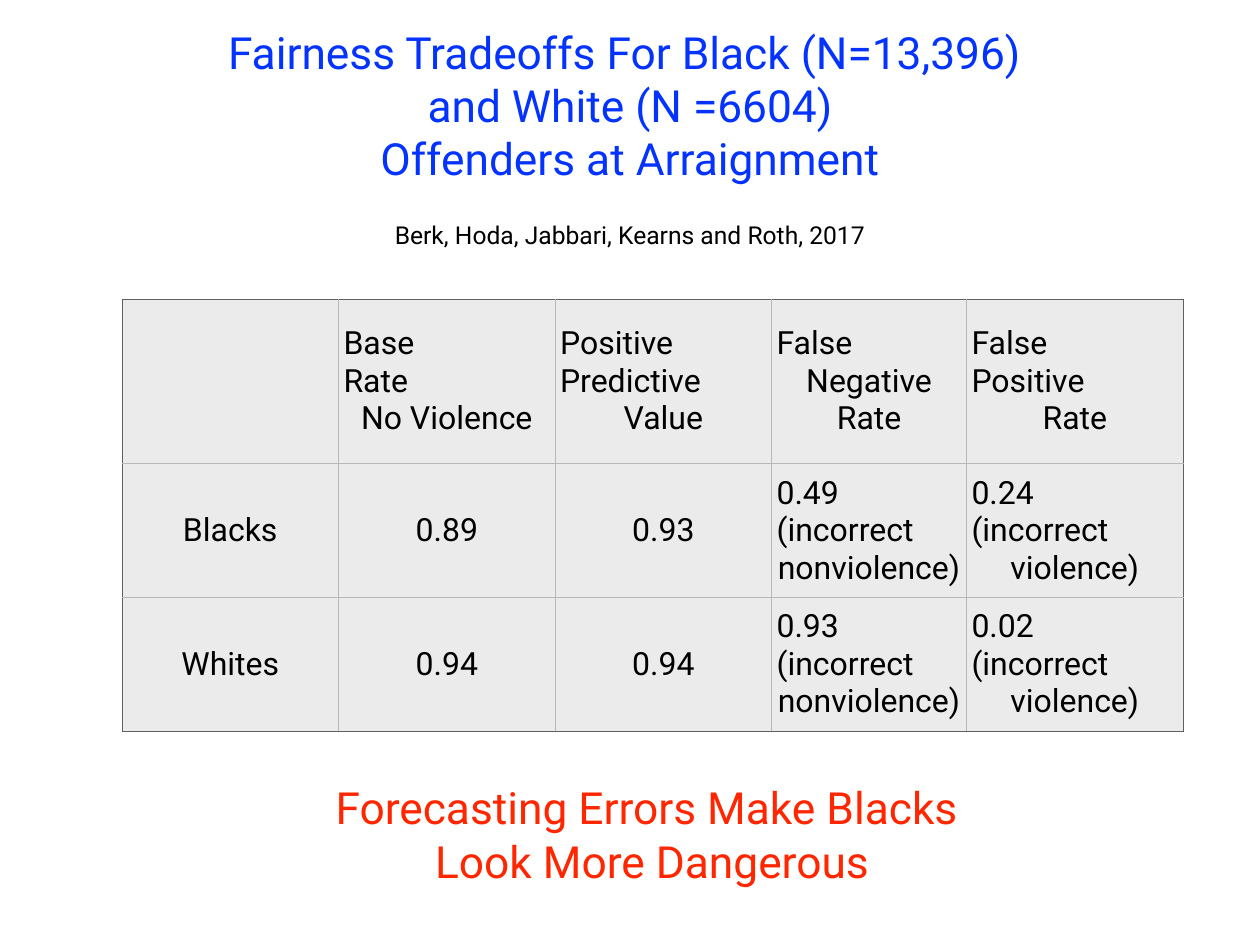
from dataclasses import dataclass
from typing import Any

import lxml.etree
import pptx
import pptx.dml.color
import pptx.enum.text
import pptx.oxml.ns
import pptx.util

EMU_PER_PX = 10160
CENTER = pptx.enum.text.PP_ALIGN.CENTER
LEFT = pptx.enum.text.PP_ALIGN.LEFT
MIDDLE = pptx.enum.text.MSO_ANCHOR.MIDDLE


@dataclass(frozen=True)
class Theme:
    font: str = "Roboto"
    heading_size: int = 36
    table_size: int = 26
    citation_size: int = 20
    title: str = "0433FF"
    conclusion: str = "FF2600"
    text: str = "000000"
    cell: str = "EBEBEB"
    grid: str = "B8B8B8"
    frame: str = "606060"
    border_width: int = 1
    inset: int = 5


@dataclass(frozen=True)
class Caption:
    lines: tuple[str, ...]
    left: int
    top: int
    width: int
    height: int
    size: int
    color: str


THEME = Theme()
SLIDE_SIZE = (1280, 960)
TABLE_ORIGIN = (124, 304)
COLUMN_WIDTHS = (220, 220, 220, 198, 220)
ROW_HEIGHTS = (167, 136, 136)

CAPTIONS = (
    Caption(
        ("Fairness Tradeoffs For Black (N=13,396) ", "and White (N =6604)", "Offenders at Arraignment"),
        215, 21, 850, 171, THEME.heading_size, THEME.title,
    ),
    Caption(
        ("Forecasting Errors Make Blacks ", "Look More Dangerous"),
        325, 788, 675, 118, THEME.heading_size, THEME.conclusion,
    ),
    Caption(
        ("Berk, Hoda, Jabbari, Kearns and Roth, 2017",),
        386, 218, 508, 40, THEME.citation_size, THEME.text,
    ),
)

ERROR_RATES = (
    (
        (),
        ("Base", "Rate", "No Violence"),
        ("Positive Predictive ", "Value"),
        ("False ", "Negative Rate"),
        ("False ", "Positive ", "Rate"),
    ),
    (
        ("Blacks",),
        ("0.89",),
        ("0.93",),
        ("0.49", "(incorrect", "nonviolence)"),
        ("0.24", "(incorrect", "violence)"),
    ),
    (
        ("Whites",),
        ("0.94",),
        ("0.94",),
        ("0.93", "(incorrect", "nonviolence)"),
        ("0.02", "(incorrect ", "violence)"),
    ),
)


def px(length: int) -> pptx.util.Emu:
    return pptx.util.Emu(length * EMU_PER_PX)


def rgb(color: str) -> pptx.dml.color.RGBColor:
    return pptx.dml.color.RGBColor.from_string(color)


def write_text(
    frame: Any, lines: tuple[str, ...], *, size: int, color: str, leading_alignment: Any = CENTER
) -> None:
    for index, line in enumerate(lines):
        paragraph = frame.add_paragraph() if index else frame.paragraphs[0]
        paragraph.alignment = CENTER if index == len(lines) - 1 else leading_alignment
        run = paragraph.add_run()
        run.text = line
        run.font.name = THEME.font
        run.font.size = pptx.util.Pt(size)
        run.font.color.rgb = rgb(color)


def set_insets(target: Any) -> None:
    target.margin_left = target.margin_right = px(THEME.inset)
    target.margin_top = target.margin_bottom = px(THEME.inset)
    target.vertical_anchor = MIDDLE


def set_borders(cell: Any, colors: dict[str, str]) -> None:
    qn = pptx.oxml.ns.qn
    properties = cell._tc.get_or_add_tcPr()
    for index, (side, color) in enumerate(colors.items()):
        line = lxml.etree.Element(qn(f"a:{side}"), w=str(pptx.util.Pt(THEME.border_width)))
        fill = lxml.etree.SubElement(line, qn("a:solidFill"))
        lxml.etree.SubElement(fill, qn("a:srgbClr"), val=color)
        properties.insert(index, line)


def draw_caption(slide: Any, caption: Caption) -> None:
    shape = slide.shapes.add_textbox(
        px(caption.left), px(caption.top), px(caption.width), px(caption.height)
    )
    frame = shape.text_frame
    set_insets(frame)
    frame.word_wrap = False
    frame.auto_size = pptx.enum.text.MSO_AUTO_SIZE.SHAPE_TO_FIT_TEXT
    write_text(frame, caption.lines, size=caption.size, color=caption.color)


def draw_table(slide: Any) -> None:
    left, top = TABLE_ORIGIN
    table = slide.shapes.add_table(
        len(ROW_HEIGHTS), len(COLUMN_WIDTHS),
        px(left), px(top), px(sum(COLUMN_WIDTHS)), px(sum(ROW_HEIGHTS)),
    ).table
    table.first_row = False
    table.horz_banding = False
    for column, width in zip(table.columns, COLUMN_WIDTHS):
        column.width = px(width)
    for row, height in zip(table.rows, ROW_HEIGHTS):
        row.height = px(height)

    last_row, last_column = len(ROW_HEIGHTS) - 1, len(COLUMN_WIDTHS) - 1
    for row_index, row_lines in enumerate(ERROR_RATES):
        for column_index, lines in enumerate(row_lines):
            cell = table.cell(row_index, column_index)
            set_insets(cell)
            cell.fill.solid()
            cell.fill.fore_color.rgb = rgb(THEME.cell)
            outer_sides = {
                "lnL": column_index == 0,
                "lnR": column_index == last_column,
                "lnT": row_index == 0,
                "lnB": row_index == last_row,
            }
            set_borders(
                cell,
                {side: THEME.frame if outer else THEME.grid for side, outer in outer_sides.items()},
            )
            write_text(
                cell.text_frame, lines,
                size=THEME.table_size, color=THEME.text, leading_alignment=LEFT,
            )


def main() -> None:
    presentation = pptx.Presentation()
    presentation.slide_width, presentation.slide_height = map(px, SLIDE_SIZE)
    slide = presentation.slides.add_slide(presentation.slide_layouts[6])
    draw_table(slide)
    for caption in CAPTIONS:
        draw_caption(slide, caption)
    presentation.save("out.pptx")


if __name__ == "__main__":
    main()
